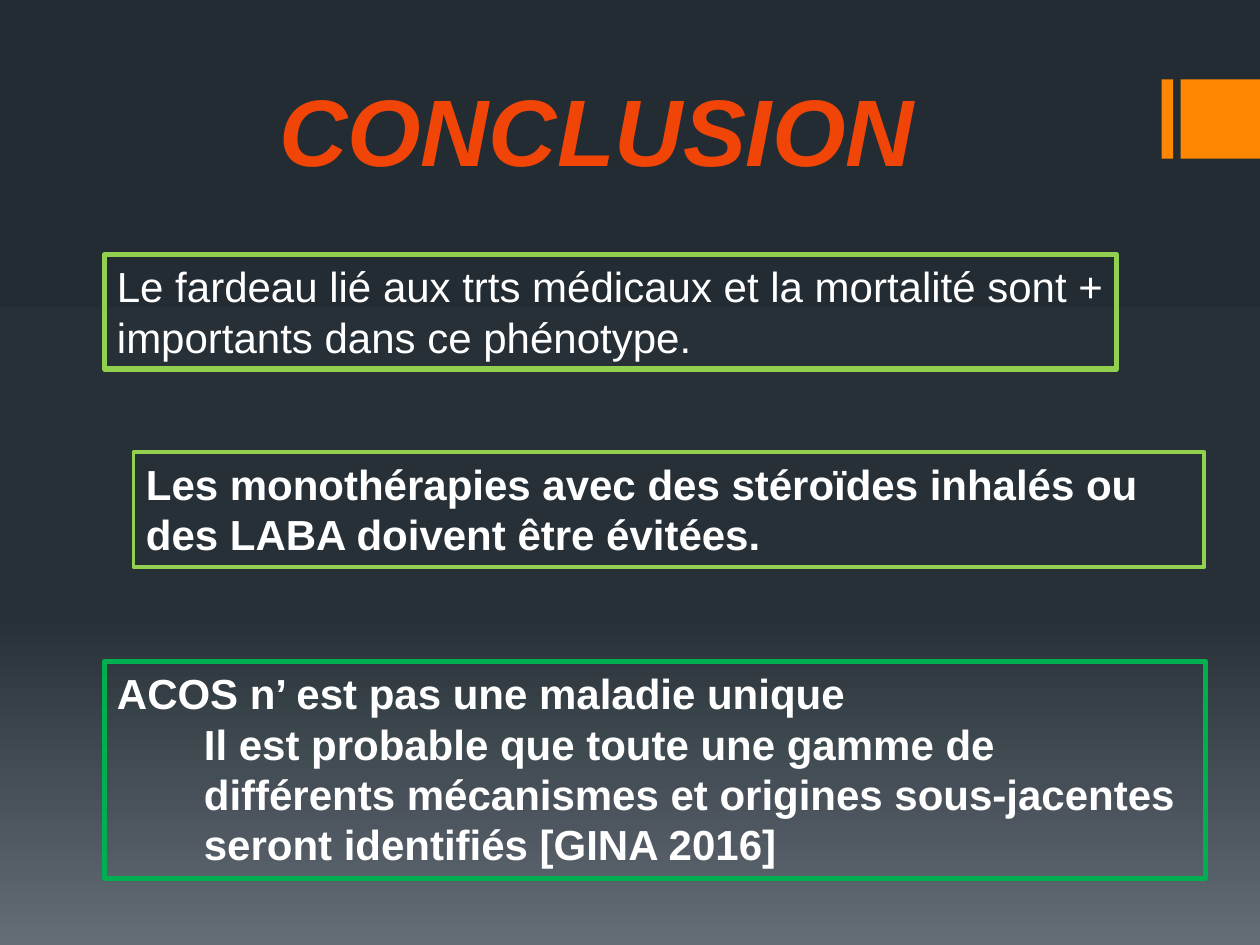
from copy import deepcopy

from pptx import Presentation
from pptx.dml.color import RGBColor
from pptx.enum.shapes import MSO_SHAPE
from pptx.enum.text import MSO_ANCHOR, PP_ALIGN
from pptx.oxml.ns import qn
from pptx.util import Inches, Pt


def color(value):
    return RGBColor.from_string(value)


def format_runs(paragraph, size, value, bold, italic=False):
    for run in paragraph.runs:
        run.font.name = "Arial"
        run.font.size = Pt(size)
        run.font.bold = bold
        run.font.italic = italic
        run.font.color.rgb = color(value)


presentation = Presentation()
presentation.slide_width = Inches(10)
presentation.slide_height = Inches(7.5)
slide = presentation.slides.add_slide(presentation.slide_layouts[6])

# Background: dark for two thirds, then lighter towards the bottom
background = slide.background.fill
background.gradient()
background.gradient_angle = 270
stop_list = slide.element.find(".//" + qn("a:gsLst"))
stop_list.insert(1, deepcopy(stop_list[0]))
stops = [(0, "242C33"), (0.65, "273037"), (1, "636D76")]
for stop, (position, value) in zip(background.gradient_stops, stops):
    stop.position = position
    stop.color.rgb = color(value)

# Orange marker at the right edge
marker_size = 0.63
for left, width in [(9.22, 0.09), (10 - marker_size, marker_size)]:
    marker = slide.shapes.add_shape(
        MSO_SHAPE.RECTANGLE, Inches(left), Inches(marker_size), Inches(width), Inches(marker_size)
    )
    marker.shadow.inherit = False
    marker.fill.solid()
    marker.fill.fore_color.rgb = color("FF8600")
    marker.line.fill.background()

title = slide.shapes.add_textbox(Inches(2.09), Inches(0.52), Inches(5.29), Inches(1.01))
title.text_frame.word_wrap = False
title.text_frame.text = "CONCLUSION"
heading = title.text_frame.paragraphs[0]
heading.alignment = PP_ALIGN.CENTER
format_runs(heading, 54, "F04507", bold=True, italic=True)

# Framed statements: left, top, width, height, line colour, line width, bold, paragraphs
statements = [
    (0.83, 2.02, 8.03, 0.91, "92D050", 3, False,
     ["Le fardeau lié aux trts médicaux et la mortalité sont + importants dans ce phénotype."]),
    (1.06, 3.59, 8.5, 0.91, "92D050", 2.25, True,
     ["Les monothérapies avec des stéroïdes inhalés ou des LABA doivent être évitées."]),
    (0.83, 5.25, 8.74, 1.72, "00B050", 3, True,
     ["ACOS n’ est pas une maladie unique",
      "Il est probable que toute une gamme de différents mécanismes et origines "
      "sous-jacentes seront identifiés [GINA 2016]"]),
]
for left, top, width, height, line_color, line_width, bold, texts in statements:
    frame = slide.shapes.add_shape(
        MSO_SHAPE.RECTANGLE, Inches(left), Inches(top), Inches(width), Inches(height)
    )
    frame.shadow.inherit = False
    frame.fill.background()
    frame.line.color.rgb = color(line_color)
    frame.line.width = Pt(line_width)
    text_frame = frame.text_frame
    text_frame.word_wrap = True
    text_frame.vertical_anchor = MSO_ANCHOR.TOP
    text_frame.text = "\n".join(texts)
    for index, paragraph in enumerate(text_frame.paragraphs):
        paragraph.alignment = PP_ALIGN.LEFT
        format_runs(paragraph, 24, "FFFFFF", bold)
        if index > 0:
            properties = paragraph._p.get_or_add_pPr()
            properties.set("marL", str(Inches(0.69)))
            properties.set("indent", "0")

presentation.save("out.pptx")
